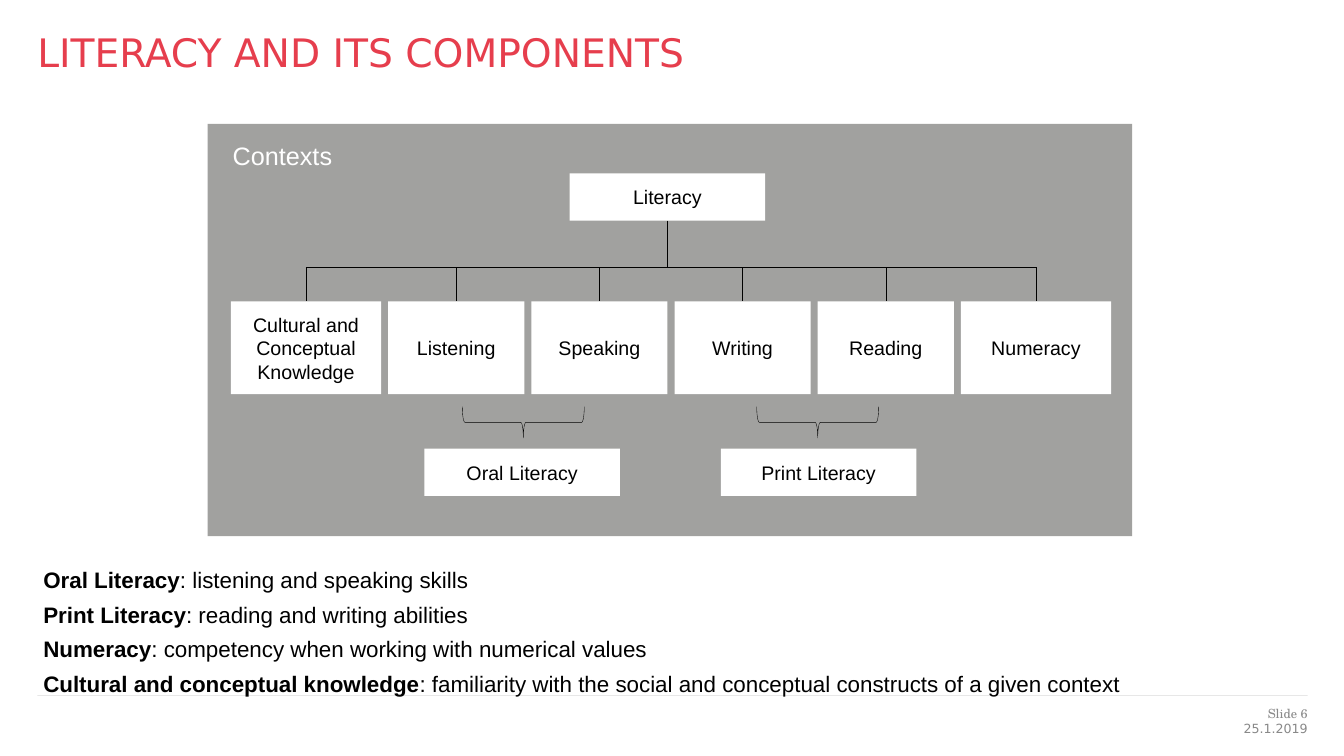
from lxml import etree
from pptx import Presentation
from pptx.dml.color import RGBColor
from pptx.enum.shapes import MSO_CONNECTOR, MSO_SHAPE
from pptx.enum.text import MSO_ANCHOR, MSO_AUTO_SIZE, PP_ALIGN
from pptx.oxml.ns import qn
from pptx.util import Inches, Pt

STRAIGHT = MSO_CONNECTOR.STRAIGHT
RECTANGLE = MSO_SHAPE.RECTANGLE
RIGHT_BRACE = MSO_SHAPE.RIGHT_BRACE
TOP, MIDDLE = MSO_ANCHOR.TOP, MSO_ANCHOR.MIDDLE
NO_AUTOFIT = MSO_AUTO_SIZE.NONE
LEFT, CENTER, RIGHT = PP_ALIGN.LEFT, PP_ALIGN.CENTER, PP_ALIGN.RIGHT

BLACK, WHITE, RED = "000000", "FFFFFF", "E63E4D"
PANEL_GRAY, FOOTER_GRAY, RULE_GRAY = "A1A19F", "898989", "262626"
SANS, SERIF, ARIAL = "DejaVu Sans", "TeX Gyre Schola", "Arial"

COMPONENTS = [
    ("Cultural and Conceptual Knowledge", 1.49),
    ("Listening", 1.35),
    ("Speaking", 1.35),
    ("Writing", 1.35),
    ("Reading", 1.35),
    ("Numeracy", 1.49),
]
SKILL_PAIRS = [("Oral Literacy", 2.15, 3.13), ("Print Literacy", 5.09, 6.05)]
DEFINITIONS = [
    ("Oral Literacy", ": listening and speaking skills"),
    ("Print Literacy", ": reading and writing abilities"),
    ("Numeracy", ": competency when working with numerical values"),
    ("Cultural and conceptual knowledge",
     ": familiarity with the social and conceptual constructs of a given context"),
]


def color(hex_value):
    return RGBColor.from_string(hex_value)


def add_run(paragraph, text, size, font, hex_value, bold=False):
    run = paragraph.add_run()
    run.text = text
    run.font.size = Pt(size)
    run.font.name = font
    run.font.bold = bold
    run.font.color.rgb = color(hex_value)


def set_frame(frame, inset=0, anchor=TOP, wrap=True):
    frame.margin_left = frame.margin_right = Inches(inset)
    frame.margin_top = frame.margin_bottom = Inches(inset)
    frame.vertical_anchor = anchor
    frame.word_wrap = wrap
    frame.auto_size = NO_AUTOFIT


def add_text(slide, box, inset=0, wrap=True):
    frame = slide.shapes.add_textbox(*map(Inches, box)).text_frame
    set_frame(frame, inset, wrap=wrap)
    return frame


def add_line(slide, start, end, hex_value=BLACK):
    line = slide.shapes.add_connector(STRAIGHT, *map(Inches, start + end))
    line.line.color.rgb = color(hex_value)
    line.line.width = Pt(0.25)
    etree.SubElement(line._element.spPr, qn("a:effectLst"))
    return line


def add_box(slide, box, fill, label=None):
    shape = slide.shapes.add_shape(RECTANGLE, *map(Inches, box))
    shape.shadow.inherit = False
    shape.fill.solid()
    shape.fill.fore_color.rgb = color(fill)
    shape.line.fill.background()
    if label:
        set_frame(shape.text_frame, 0.05, MIDDLE)
        paragraph = shape.text_frame.paragraphs[0]
        paragraph.alignment = CENTER
        add_run(paragraph, label, 14, ARIAL, BLACK)
    return shape


def add_brace(slide, center_x, center_y, span, depth):
    box = (center_x - depth / 2, center_y - span / 2, depth, span)
    brace = slide.shapes.add_shape(RIGHT_BRACE, *map(Inches, box))
    brace.rotation = 90
    brace.shadow.inherit = False
    brace.fill.background()
    brace.line.color.rgb = color(BLACK)
    brace.line.width = Pt(0.25)


def fill_title(slide, box):
    title = slide.shapes.title
    title.left, title.top, title.width, title.height = map(Inches, box)
    set_frame(title.text_frame)
    paragraph = title.text_frame.paragraphs[0]
    paragraph.alignment = LEFT
    add_run(paragraph, "LITERACY AND ITS COMPONENTS", 28, SANS, RED)


def add_diagram(slide, box):
    left, top, width, height = box
    add_box(slide, box, PANEL_GRAY)
    contexts = add_text(slide, (left + 0.15, top + 0.11, 1.2, 0.4), 0.1, wrap=False)
    contexts.margin_top = contexts.margin_bottom = Inches(0.05)
    add_run(contexts.paragraphs[0], "Contexts", 18, ARIAL, WHITE)

    root_left, root_width, root_height = left + 3.59, 1.94, 0.47
    root = add_box(slide, (root_left, top + 0.49, root_width, root_height), WHITE, "Literacy")
    root_x = root_left + root_width / 2
    branch_y, row_y, gap = top + 1.42, top + 1.76, 0.07
    trunk = add_line(slide, (root_x, top + 0.96), (root_x, branch_y))
    trunk.begin_connect(root, 2)

    component_left, drops = left + 0.23, []
    for label, component_width in COMPONENTS:
        component = add_box(slide, (component_left, row_y, component_width, 0.92), WHITE, label)
        drop_x = component_left + component_width / 2
        drop = add_line(slide, (drop_x, branch_y), (drop_x, row_y))
        drop.end_connect(component, 0)
        drops.append(drop_x)
        component_left += component_width + gap
    add_line(slide, (drops[0], branch_y), (drops[-1], branch_y))

    for label, pair_left, brace_x in SKILL_PAIRS:
        add_brace(slide, left + brace_x, top + 2.96, 1.21, 0.31)
        add_box(slide, (left + pair_left, top + 3.22, root_width, root_height), WHITE, label)


def add_definitions(slide, box):
    frame = add_text(slide, box, 0.06)
    for index, (term, meaning) in enumerate(DEFINITIONS):
        paragraph = frame.add_paragraph() if index else frame.paragraphs[0]
        if index:
            paragraph.space_before = Pt(5.5)
        add_run(paragraph, term, 16, ARIAL, BLACK, bold=True)
        add_run(paragraph, meaning, 16, ARIAL, BLACK)


def add_footer(slide, box):
    left, top, width, height = box
    rule = add_line(slide, (left, top), (left + width, top), RULE_GRAY)
    rule_color = rule.line._ln.find(".//" + qn("a:srgbClr"))
    etree.SubElement(rule_color, qn("a:alpha"), val="31000")
    entries = [("Slide 6", SERIF, 0.1, 0.14), ("25.1.2019", SANS, 0.25, 0.2)]
    for text, font, offset, line_height in entries:
        entry = add_text(slide, (left + width - 1.85, top + offset, 1.85, line_height))
        entry.paragraphs[0].alignment = RIGHT
        add_run(entry.paragraphs[0], text, 9, font, FOOTER_GRAY)


def main():
    presentation = Presentation()
    presentation.slide_width = Inches(13.33)
    presentation.slide_height = Inches(7.5)
    slide = presentation.slides.add_slide(presentation.slide_layouts[5])
    fill_title(slide, (0.37, 0.28, 12.6, 0.94))
    add_diagram(slide, (2.06, 1.23, 9.17, 4.09))
    add_definitions(slide, (0.37, 5.56, 12.6, 1.18))
    add_footer(slide, (0.37, 6.9, 12.6, 0.45))
    presentation.save("out.pptx")


if __name__ == "__main__":
    main()
